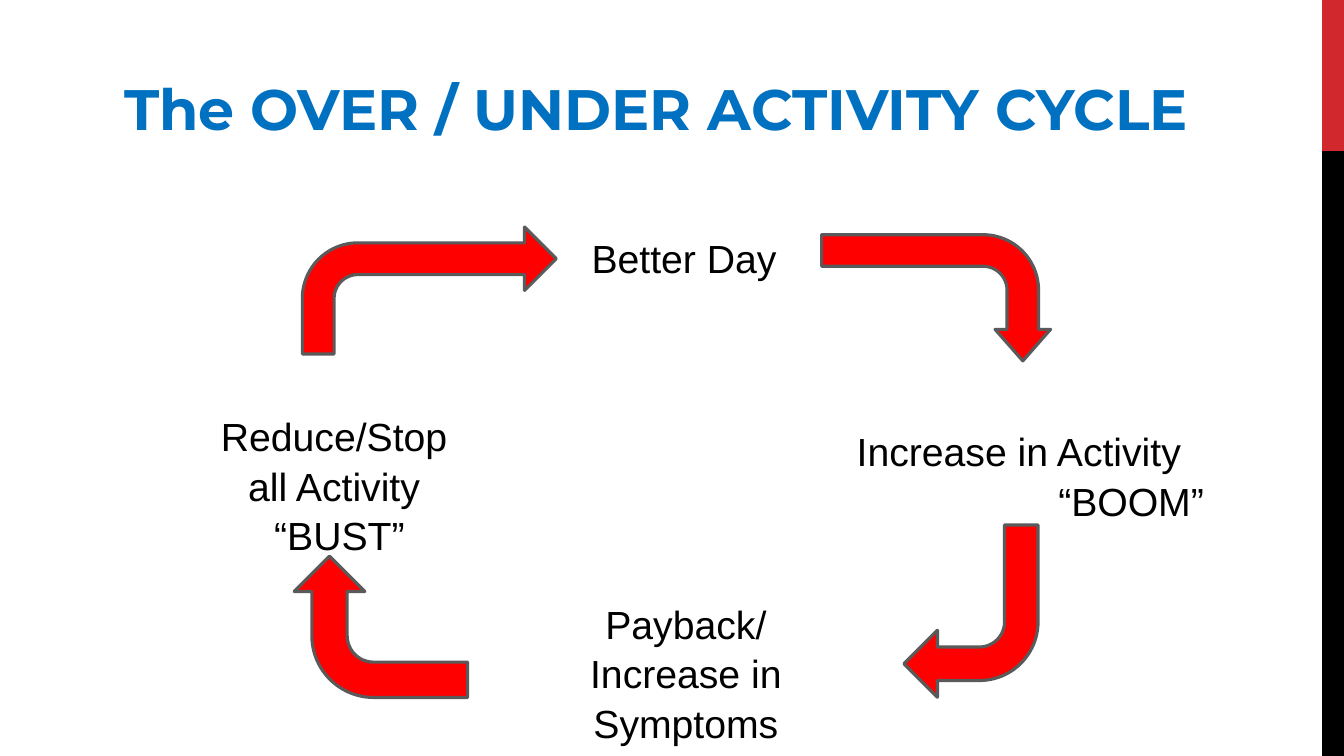
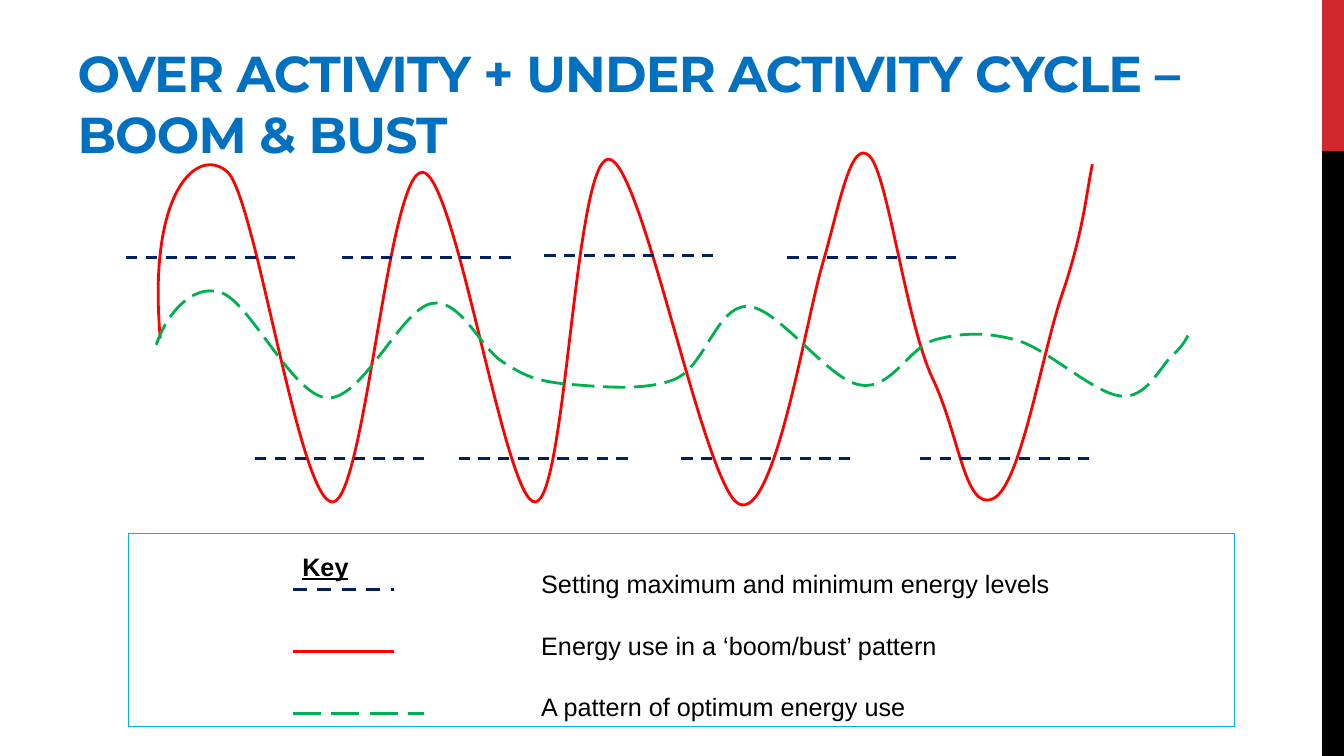
from dataclasses import dataclass

from lxml import etree
from pptx import Presentation
from pptx.dml.color import RGBColor
from pptx.enum.dml import MSO_LINE
from pptx.enum.shapes import MSO_CONNECTOR, MSO_SHAPE
from pptx.enum.text import MSO_ANCHOR, MSO_AUTO_SIZE, PP_ALIGN
from pptx.oxml.ns import qn
from pptx.util import Cm, Pt

LEFT, CENTER = PP_ALIGN.LEFT, PP_ALIGN.CENTER
TOP, MIDDLE, BOTTOM = MSO_ANCHOR.TOP, MSO_ANCHOR.MIDDLE, MSO_ANCHOR.BOTTOM
NO_AUTOFIT = MSO_AUTO_SIZE.NONE
RECTANGLE, BENT_ARROW = MSO_SHAPE.RECTANGLE, MSO_SHAPE.BENT_ARROW
STRAIGHT = MSO_CONNECTOR.STRAIGHT
DASH, LONG_DASH = MSO_LINE.DASH, MSO_LINE.LONG_DASH
TITLE_ONLY = 5


@dataclass(frozen=True)
class Theme:
    title_font: str = "Montserrat"
    body_font: str = "Arial"
    title: str = "0070C0"
    text: str = "000000"
    band_top: str = "D1282E"
    band_bottom: str = "000000"
    arrow: str = "FF0000"
    arrow_edge: str = "5A5A5A"
    level: str = "002060"
    boom_bust: str = "FF0000"
    optimum: str = "00B050"
    key_edge: str = "00B0F0"
    cycle_title_size: float = 40.7
    chart_title_size: float = 36
    label_size: float = 28
    key_size: float = 18
    curve_width: float = 2
    key_line_width: float = 2.5


THEME = Theme()

# Start point, then Bézier triples (control, control, end), in cm
BOOM_BUST_CURVE = [
    (4.04, 8.53),
    (3.71, 4.78), (5, 3.66), (5.74, 4.34),
    (6.45, 5.03), (7.54, 12.65), (8.38, 12.65),
    (9.19, 12.65), (9.78, 4.34), (10.64, 4.34),
    (11.48, 4.34), (12.73, 12.7), (13.49, 12.65),
    (14.27, 12.6), (14.48, 4.01), (15.34, 4.01),
    (16.18, 4.04), (17.73, 12.24), (18.62, 12.7),
    (19.51, 13.13), (20.29, 8.15), (20.73, 6.65),
    (21.16, 5.18), (21.44, 3.45), (21.92, 3.94),
    (22.38, 4.42), (22.83, 8.1), (23.5, 9.53),
    (24.18, 10.95), (24.31, 12.88), (25.02, 12.57),
    (25.73, 12.27), (26.26, 8.84), (26.8, 7.32),
    (27.31, 5.79), (27.38, 4.85), (27.53, 4.14),
]
OPTIMUM_CURVE = [
    (3.94, 8.69),
    (4.19, 7.92), (4.85, 7.14), (5.56, 7.37),
    (6.3, 7.59), (7.37, 9.98), (8.26, 10.03),
    (9.14, 10.06), (10.11, 7.8), (10.87, 7.65),
    (11.61, 7.49), (12.12, 8.81), (12.7, 9.14),
    (13.26, 9.5), (13.56, 9.6), (14.27, 9.68),
    (14.99, 9.73), (16.26, 9.88), (17.02, 9.55),
    (17.78, 9.22), (18.06, 7.7), (18.85, 7.72),
    (19.61, 7.75), (20.88, 9.58), (21.67, 9.7),
    (22.45, 9.86), (22.91, 8.74), (23.57, 8.56),
    (24.26, 8.38), (24.89, 8.36), (25.68, 8.59),
    (26.44, 8.84), (27.58, 9.91), (28.24, 9.98),
    (28.88, 10.06), (29.24, 9.25), (29.51, 8.99),
    (29.79, 8.74), (29.87, 8.59), (29.95, 8.43),
]


def rgb(value):
    return RGBColor.from_string(value)


def cm_box(*lengths):
    return [Cm(length) for length in lengths]


def put_text(tf, lines, size, font=THEME.body_font, color=THEME.text, bold=False,
             underline=None, align=LEFT, anchor=TOP, spacing=1.05, gap=0,
             indents=(), tracking=None):
    """Fill a frame, one paragraph a line; indents (cm) go line by line."""
    tf.word_wrap = True
    tf.auto_size = NO_AUTOFIT
    tf.vertical_anchor = anchor
    for i, line in enumerate(lines):
        p = tf.paragraphs[0] if i == 0 else tf.add_paragraph()
        p.alignment = align
        p.line_spacing = spacing
        p.space_before = Pt(gap if i else 0)
        if indents:
            p._p.get_or_add_pPr().set("marL", str(Cm(indents[i])))
        r = p.add_run()
        r.text = line
        r.font.name = font
        r.font.size = Pt(size)
        r.font.bold = bold
        r.font.underline = underline
        r.font.color.rgb = rgb(color)
        if tracking is not None:
            r._r.get_or_add_rPr().set("spc", str(tracking))


def style_line(line, color, width, dash=None):
    line.color.rgb = rgb(color)
    line.width = Pt(width)
    if dash is not None:
        line.dash_style = dash


def add_label(slide, box, lines, size=THEME.label_size, **fmt):
    tb = slide.shapes.add_textbox(*cm_box(*box))
    put_text(tb.text_frame, lines, size, **fmt)


def add_block(slide, shape_type, box, fill=None, edge=None, width=0.75):
    sp = slide.shapes.add_shape(shape_type, *cm_box(*box))
    sp.shadow.inherit = False
    if fill:
        sp.fill.solid()
        sp.fill.fore_color.rgb = rgb(fill)
    else:
        sp.fill.background()
    if edge:
        style_line(sp.line, edge, width)
    else:
        sp.line.fill.background()
    return sp


def add_arrow(slide, box, rotation=0, adjustments=()):
    sp = add_block(slide, BENT_ARROW, box, THEME.arrow, THEME.arrow_edge, 2.25)
    sp.rotation = rotation
    for i, value in enumerate(adjustments):
        sp.adjustments[i] = value


def add_level_line(slide, x, y, length, color, width, dash=None):
    line = slide.shapes.add_connector(STRAIGHT, *cm_box(x, y, x + length, y))
    style_line(line.line, color, width, dash)
    etree.SubElement(line._element.spPr, qn("a:effectLst"))


def add_curve(slide, points, color, dash=None):
    """Draw a freeform, turning each three of its points into a Bézier segment."""
    start, *rest = [cm_box(*point) for point in points]
    builder = slide.shapes.build_freeform(*start)
    builder.add_line_segments(rest, close=False)
    sp = builder.convert_to_shape()
    sp.shadow.inherit = False
    sp.fill.background()
    style_line(sp.line, color, THEME.curve_width, dash)
    segments = sp._element.xpath(".//a:lnTo")
    outline = segments[0].getparent()
    for i in range(0, len(segments), 3):
        bezier = etree.SubElement(outline, qn("a:cubicBezTo"))
        for segment in segments[i:i + 3]:
            bezier.append(segment[0])
            outline.remove(segment)


def add_master_bands(prs, slide):
    """Draw the side bands and move them to the master, which all slides share."""
    tree = prs.slide_master.shapes._spTree
    for top, height, color in ((0, 3.81, THEME.band_top),
                               (3.81, 15.24, THEME.band_bottom)):
        band = add_block(slide, RECTANGLE, (33.32, top, 0.55, height), color)
        tree.append(band._element)


def set_title(slide, box, text, size, **fmt):
    title = slide.shapes.title
    title.left, title.top, title.width, title.height = cm_box(*box)
    put_text(title.text_frame, [text], size, font=THEME.title_font,
             color=THEME.title, bold=True, spacing=1.0, **fmt)


def build_cycle(slide):
    set_title(slide, (1.48, 1.12, 30.1, 3.18), "The OVER / UNDER ACTIVITY CYCLE",
              THEME.cycle_title_size, align=CENTER, anchor=MIDDLE)
    add_label(slide, (14.66, 5.72, 6.71, 1.45), ["Better Day"])
    add_label(slide, (3.68, 10.21, 9.75, 3.84),
              ["Reduce/Stop ", "all Activity ", "“BUST”"], align=CENTER)
    add_label(slide, (21.34, 10.59, 9.65, 2.64),
              ["Increase in Activity", "“BOOM”"], indents=(0, 5.08))
    add_label(slide, (12.42, 14.94, 9.73, 2.64),
              ["Payback/", "Increase in Symptoms"], align=CENTER)

    add_arrow(slide, (7.62, 5.72, 6.4, 3.2))
    add_arrow(slide, (22, 4.62, 3.18, 5.77), 90, (0.25, 0.22, 0.25, 0.44))
    add_arrow(slide, (22.78, 13.23, 3.38, 4.34), 180)
    add_arrow(slide, (7.82, 13.61, 3.56, 4.37), 270)


def build_energy_chart(slide):
    set_title(slide, (1.7, 0.43, 30.15, 3.81),
              "OVER ACTIVITY + UNDER ACTIVITY CYCLE – BOOM & BUST",
              THEME.chart_title_size, anchor=BOTTOM, tracking=-60)
    add_curve(slide, BOOM_BUST_CURVE, THEME.boom_bust)
    maximum = [(3.18, 6.48), (8.61, 6.48), (13.72, 6.43), (19.84, 6.48)]
    minimum = [(x, 11.56) for x in (6.43, 11.56, 17.17, 23.19)]
    for x, y in maximum + minimum:
        add_level_line(slide, x, y, 4.35, THEME.level, THEME.curve_width, DASH)
    add_curve(slide, OPTIMUM_CURVE, THEME.optimum, LONG_DASH)
    add_key(slide)


def add_key(slide):
    entries = [
        ("Setting maximum and minimum energy levels", THEME.level, DASH, 2.55),
        ("Energy use in a ‘boom/bust’ pattern", THEME.boom_bust, None, 2.55),
        ("A pattern of optimum energy use", THEME.optimum, LONG_DASH, 3.3),
    ]
    frame = add_block(slide, RECTANGLE, (3.23, 13.44, 27.89, 4.88),
                      edge=THEME.key_edge)
    put_text(frame.text_frame, [entry[0] for entry in entries], THEME.key_size,
             anchor=BOTTOM, gap=21.5, indents=[10.16] * len(entries))
    add_label(slide, (7.37, 13.72, 4.29, 1.02), ["Key"], THEME.key_size,
              bold=True, underline=True)
    for i, (_, color, dash, length) in enumerate(entries):
        add_level_line(slide, 7.38, 14.86 + i * 1.56, length, color,
                       THEME.key_line_width, dash)


def main():
    prs = Presentation()
    prs.slide_width, prs.slide_height = Cm(33.87), Cm(19.05)
    layout = prs.slide_layouts[TITLE_ONLY]
    cycle = prs.slides.add_slide(layout)
    add_master_bands(prs, cycle)
    build_cycle(cycle)
    build_energy_chart(prs.slides.add_slide(layout))
    prs.save("out.pptx")


if __name__ == "__main__":
    main()
